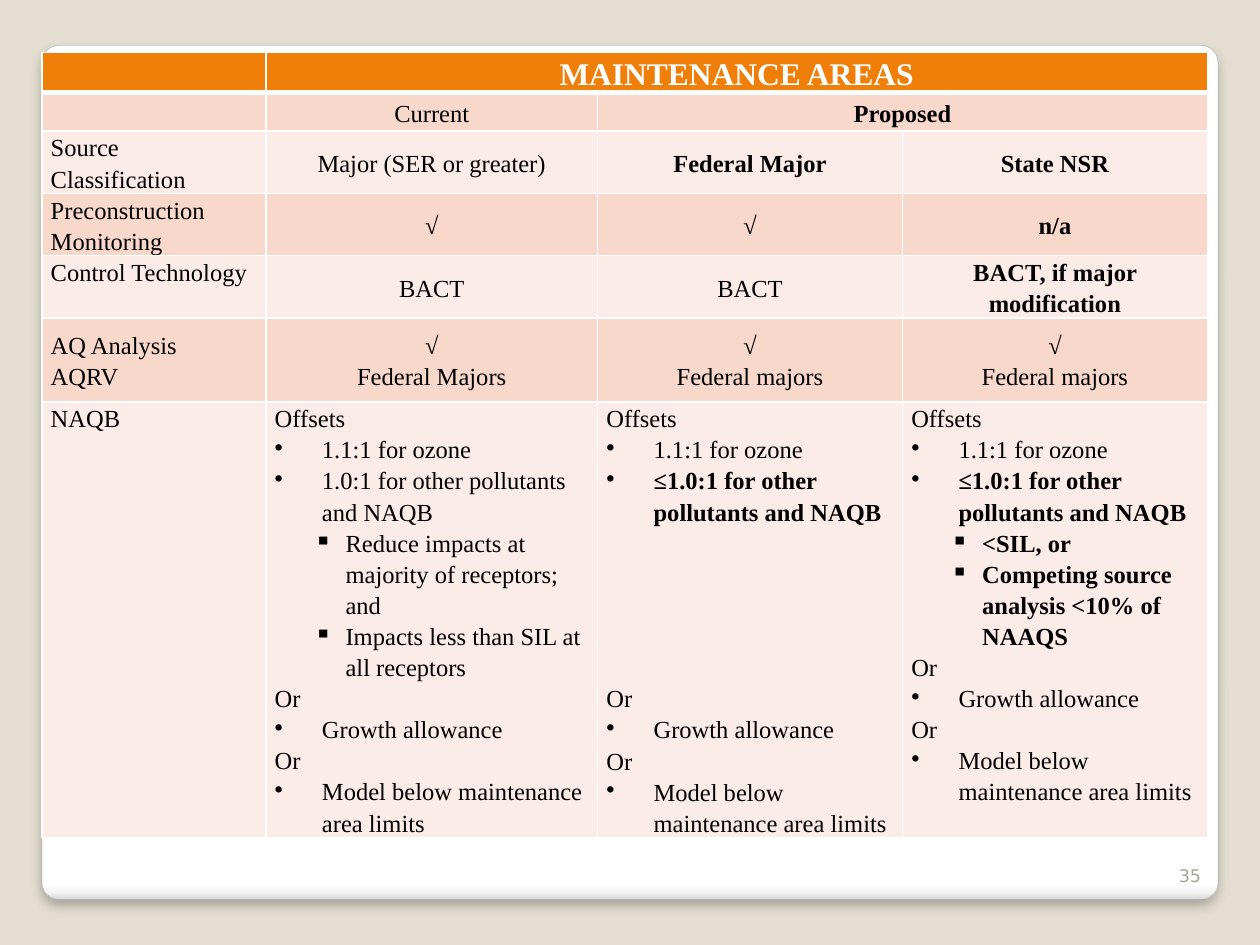
from dataclasses import dataclass
from lxml import etree
from pptx import Presentation
from pptx.dml.color import RGBColor
from pptx.enum.shapes import MSO_SHAPE
from pptx.enum.text import MSO_ANCHOR, PP_ALIGN
from pptx.oxml.ns import qn
from pptx.util import Pt

ROUND = MSO_SHAPE.ROUNDED_RECTANGLE
TOP, MID, LOW = MSO_ANCHOR.TOP, MSO_ANCHOR.MIDDLE, MSO_ANCHOR.BOTTOM
LEFT, CENTER, RIGHT = PP_ALIGN.LEFT, PP_ALIGN.CENTER, PP_ALIGN.RIGHT
SERIF, SANS = "Times New Roman", "DejaVu Sans"
WHITE, BLACK, ORANGE = "FFFFFF", "000000", "F07F09"
DARK, PALE = "F9D8CC", "FCECE7"
COLS = (128, 189.5, 174.25, 174.25)
ROWS = (22.9, 21.8, 35.6, 35.6, 35.6, 48, 248.8)
STOPS = ((0, WHITE), (98, WHITE), (99, "F7F7F7"), (100, "DADADA"))


@dataclass
class Bullet:
    mark: str
    level: int
    left: float
    hang: float


@dataclass
class Line:
    text: str
    bold: bool = False
    bullet: Bullet | None = None
    gap: float = 0


@dataclass
class Entry:
    lines: list[Line]
    align: PP_ALIGN = CENTER
    anchor: MSO_ANCHOR = MID
    span: int = 1


DOT = Bullet("•", 0, 27, 27)
BOX = Bullet("▪", 1, 40.5, 18)


def color(code: str) -> RGBColor:
    return RGBColor.from_string(code)


def mid(*texts: str, bold: bool = False, span: int = 1) -> Entry:
    return Entry([Line(t, bold or t == "√") for t in texts], span=span)


def label(*texts: str, anchor: MSO_ANCHOR = TOP) -> Entry:
    return Entry([Line(t) for t in texts], LEFT, anchor)


def offsets(rule: Line, subs: list[Line], gap: float = 0) -> Entry:
    lines = [Line("Offsets"), Line("1.1:1 for ozone", bullet=DOT), rule, *subs,
             Line("Or", gap=gap), Line("Growth allowance", bullet=DOT),
             Line("Or"), Line("Model below maintenance area limits", bullet=DOT)]
    return Entry(lines, LEFT, TOP)


OLD = Line("1.0:1 for other pollutants and NAQB", bullet=DOT)
NEW = Line("≤1.0:1 for other pollutants and NAQB", True, DOT)
GRID = [
    [label(), mid("MAINTENANCE AREAS", bold=True, span=3)],
    [label(), mid("Current"), mid("Proposed", bold=True, span=2)],
    [label("Source Classification"), mid("Major (SER or greater)"),
     mid("Federal Major", bold=True), mid("State NSR", bold=True)],
    [label("Preconstruction Monitoring"), mid("√"), mid("√"), mid("n/a", bold=True)],
    [label("Control Technology"), mid("BACT"), mid("BACT"),
     mid("BACT, if major modification", bold=True)],
    [label("AQ Analysis", "AQRV", anchor=MID), mid("√", "Federal Majors"),
     mid("√", "Federal majors"), mid("√", "Federal majors")],
    [label("NAQB"),
     offsets(OLD, [Line("Reduce impacts at majority of receptors; and", bullet=BOX),
                   Line("Impacts less than SIL at all receptors", bullet=BOX)]),
     offsets(NEW, [], gap=89),
     offsets(NEW, [Line("<SIL, or", True, BOX),
                   Line("Competing source analysis <10% of NAAQS", True, BOX)])],
]


def add_run(para, text: str, face: str, size: float, code: str, bold: bool = False) -> None:
    run = para.add_run()
    run.text = text
    font = run.font
    font.name, font.size, font.bold = face, Pt(size), bold
    font.color.rgb = color(code)


def set_bullet(para, bullet: Bullet) -> None:
    para.level = bullet.level
    props = para._p.get_or_add_pPr()
    props.set("marL", str(Pt(bullet.left)))
    props.set("indent", str(-Pt(bullet.hang)))
    etree.SubElement(props, qn("a:buChar"), char=bullet.mark)


def set_edges(cell, base: float) -> None:
    props = cell._tc.get_or_add_tcPr()
    for spot, side in enumerate("LRTB"):
        width = base if side == "B" else 1
        edge = etree.Element(qn(f"a:ln{side}"), w=str(Pt(width)))
        fill = etree.SubElement(edge, qn("a:solidFill"))
        etree.SubElement(fill, qn("a:srgbClr"), val=WHITE)
        props.insert(spot, edge)


def fill_cell(cell, entry: Entry, head: bool) -> None:
    cell.vertical_anchor = TOP if head else entry.anchor
    size, code = (18, WHITE) if head else (14, BLACK)
    frame = cell.text_frame
    for i, line in enumerate(entry.lines):
        para = frame.add_paragraph() if i else frame.paragraphs[0]
        para.alignment = entry.align
        para.line_spacing = 1.15
        if line.gap:
            para.space_before = Pt(line.gap)
        if line.bullet:
            set_bullet(para, line.bullet)
        add_run(para, line.text, SERIF, size, code, line.bold)


def add_grid(slide) -> None:
    table = slide.shapes.add_table(len(ROWS), len(COLS), Pt(24), Pt(30),
                                   Pt(sum(COLS)), Pt(sum(ROWS))).table
    table.first_row = table.horz_banding = False
    for col, width in zip(table.columns, COLS):
        col.width = Pt(width)
    for r, entries in enumerate(GRID):
        table.rows[r].height = Pt(ROWS[r])
        head = r == 0
        for cell in table.rows[r].cells:
            cell.margin_left = cell.margin_right = Pt(5)
            cell.margin_top = cell.margin_bottom = 0
            cell.fill.solid()
            cell.fill.fore_color.rgb = color(ORANGE if head else DARK if r % 2 else PALE)
            set_edges(cell, 3 if head else 1)
        c = 0
        for entry in entries:
            cell = table.cell(r, c)
            if entry.span > 1:
                cell.merge(table.cell(r, c + entry.span - 1))
            fill_cell(cell, entry, head)
            c += entry.span


def add_panel(slide) -> None:
    panel = slide.shapes.add_shape(ROUND, Pt(24), Pt(26), Pt(672), Pt(488))
    panel.adjustments[0] = 0.02
    panel.fill.gradient()
    panel.fill.gradient_angle = 270
    panel.line.color.rgb = color("A4A4A4")
    panel.line.width = Pt(0.16)
    panel.shadow.inherit = False
    props = panel._element.spPr
    stops = props.find(".//" + qn("a:gsLst"))
    for stop in list(stops):
        stops.remove(stop)
    for place, code in STOPS:
        stop = etree.SubElement(stops, qn("a:gs"), pos=str(place * 1000))
        etree.SubElement(stop, qn("a:srgbClr"), val=code)
    shade = etree.SubElement(props.find(qn("a:effectLst")), qn("a:outerShdw"),
                             blurRad=str(Pt(6)), dist=str(Pt(4)), dir="5400000")
    tint = etree.SubElement(shade, qn("a:srgbClr"), val=BLACK)
    etree.SubElement(tint, qn("a:alpha"), val="25000")


def add_number(slide) -> None:
    frame = slide.shapes.add_textbox(Pt(657.4), Pt(481), Pt(36), Pt(28.8)).text_frame
    frame.word_wrap = True
    frame.vertical_anchor = LOW
    para = frame.paragraphs[0]
    para.alignment = RIGHT
    add_run(para, "35", SANS, 10, "A8A49B")


def main() -> None:
    deck = Presentation()
    deck.slide_width, deck.slide_height = Pt(720), Pt(540)
    slide = deck.slides.add_slide(deck.slide_layouts[6])
    back = slide.background.fill
    back.solid()
    back.fore_color.rgb = color("E3DED1")
    add_panel(slide)
    add_grid(slide)
    add_number(slide)
    deck.save("out.pptx")


if __name__ == "__main__":
    main()
